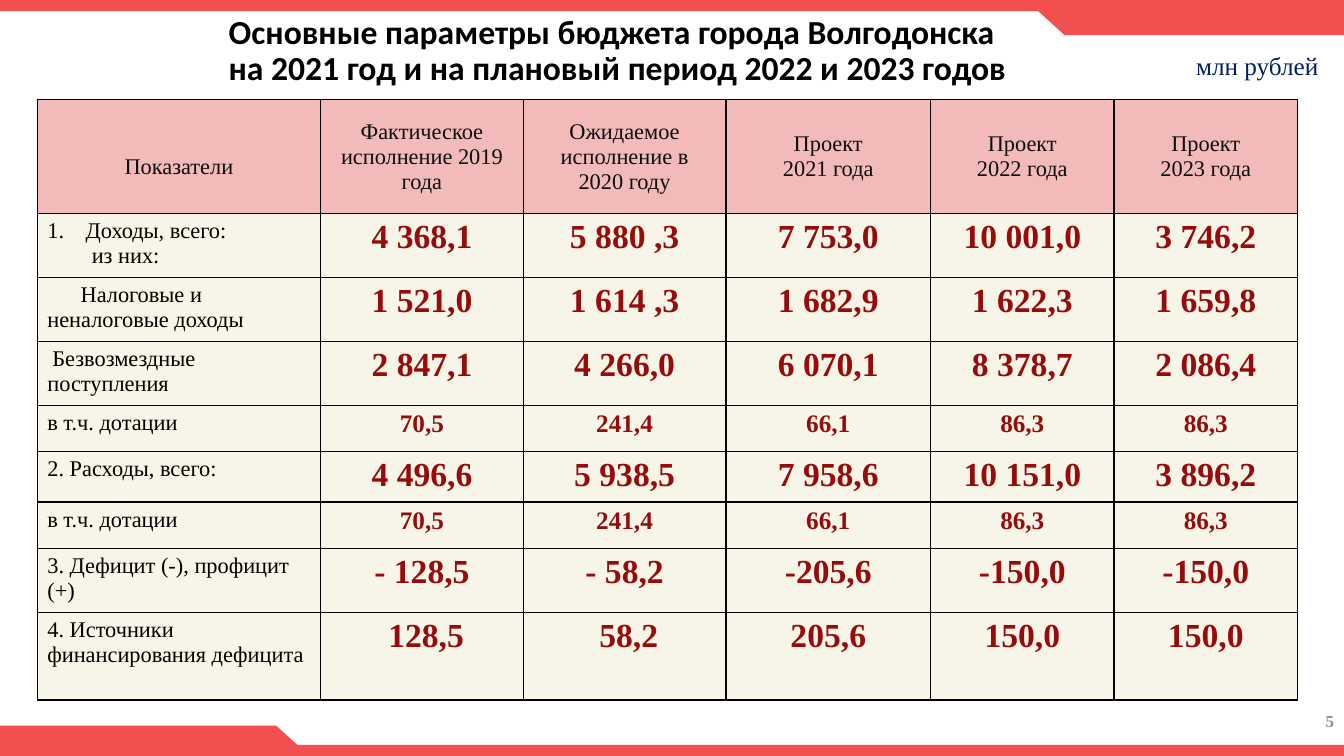
from lxml.etree import SubElement
from pptx import Presentation
from pptx.dml.color import RGBColor
from pptx.enum.shapes import MSO_SHAPE as SHAPE
from pptx.enum.text import MSO_ANCHOR as ANCHOR, PP_ALIGN as ALIGN
from pptx.oxml.ns import qn
from pptx.util import Inches, Pt

RED, HEAD_FILL, BODY_FILL = "F25050", "F3BABA", "F7F5E7"
SERIF = "Times New Roman"
LABEL = dict(name=SERIF, size=Pt(16), color="000000")
HEAD = dict(LABEL, color="0D0D0D")
VALUE = dict(name=SERIF, size=Pt(24), color="960B0B", bold=True)
SUBVALUE = dict(VALUE, size=Pt(18))

COLS = [2.81, 2.01, 2.01, 2.03, 1.82, 1.82]
ROWS = [1.13, 0.61, 0.61, 0.61, 0.46, 0.48, 0.46, 0.61, 0.87]
HEADERS = ["Показатели", "Фактическое исполнение 2019 года",
           "Ожидаемое исполнение в\n2020 году",
           "Проект\n2021 года", "Проект\n2022 года", "Проект\n2023 года"]
GRANTS = ["в т.ч. дотации", "70,5", "241,4", "66,1", "86,3", "86,3"]
BUDGET = [
    ["Доходы, всего:\nиз них:", "4 368,1", "5 880 ,3", "7 753,0", "10 001,0", "3 746,2"],
    ["Налоговые и неналоговые доходы", "1 521,0", "1 614 ,3", "1 682,9", "1 622,3", "1 659,8"],
    ["Безвозмездные поступления", "2 847,1", "4 266,0", "6 070,1", "8 378,7", "2 086,4"],
    GRANTS,
    ["2. Расходы, всего:", "4 496,6", "5 938,5", "7 958,6", "10 151,0", "3 896,2"],
    GRANTS,
    ["3. Дефицит (-), профицит (+)", "- 128,5", "- 58,2", "-205,6", "-150,0", "-150,0"],
    ["4. Источники финансирования дефицита", " 128,5", " 58,2", "205,6", "150,0", "150,0"],
]


def rgb(color):
    return RGBColor.from_string(color)


def set_indent(p, left, first):
    pPr = p._p.get_or_add_pPr()
    pPr.set("marL", str(Inches(left)))
    pPr.set("indent", str(Inches(first)))
    return pPr


class Deck:
    def __init__(self, width, height):
        self.prs = Presentation()
        self.prs.slide_width, self.prs.slide_height = Inches(width), Inches(height)
        self.s = self.prs.slides.add_slide(self.prs.slide_layouts[6])

    def shape(self, kind, box, rotation=0):
        sp = self.s.shapes.add_shape(kind, *map(Inches, box))
        sp.shadow.inherit = False
        sp.fill.solid()
        sp.fill.fore_color.rgb = rgb(RED)
        sp.line.fill.background()
        sp.rotation = rotation

    def fill_text(self, tf, text, style, align=ALIGN.LEFT, spacing=None):
        """Fill a text frame: a newline starts a paragraph, a vertical tab breaks a line."""
        tf.text = text
        for p in tf.paragraphs:
            p.alignment = align
            if spacing:
                p.line_spacing = spacing
            for r in p.runs:
                for key, value in style.items():
                    if key == "color":
                        r.font.color.rgb = rgb(value)
                    else:
                        setattr(r.font, key, value)

    def text(self, box, text, style, align=ALIGN.LEFT, anchor=ANCHOR.TOP, spacing=None):
        tf = self.s.shapes.add_textbox(*map(Inches, box)).text_frame
        tf.word_wrap = True
        tf.vertical_anchor = anchor
        self.fill_text(tf, text, style, align, spacing)

    def cell(self, cell, text, style, fill, align, anchor):
        tcPr = cell._tc.get_or_add_tcPr()
        for side in ("a:lnL", "a:lnR", "a:lnT", "a:lnB"):
            ln = SubElement(tcPr, qn(side), w=str(Pt(1)))
            SubElement(SubElement(ln, qn("a:solidFill")), qn("a:srgbClr"), val="000000")
        cell.fill.solid()
        cell.fill.fore_color.rgb = rgb(fill)
        cell.vertical_anchor = anchor
        self.fill_text(cell.text_frame, text, style, align)

    def table(self, left, top):
        tbl = self.s.shapes.add_table(len(ROWS), len(COLS), Inches(left), Inches(top),
                                      Inches(sum(COLS)), Inches(sum(ROWS))).table
        tbl.first_row = tbl.horz_banding = False
        for col, width in zip(tbl.columns, COLS):
            col.width = Inches(width)
        for row, height in zip(tbl.rows, ROWS):
            row.height = Inches(height)
        for j, text in enumerate(HEADERS):
            anchor = ANCHOR.MIDDLE if j else ANCHOR.TOP
            self.cell(tbl.cell(0, j), text, HEAD, HEAD_FILL, ALIGN.CENTER, anchor)
        tbl.cell(0, 0).margin_top = Inches(0.54)
        for i, row in enumerate(BUDGET, 1):
            value_style = SUBVALUE if row is GRANTS else VALUE
            for j, text in enumerate(row):
                style, align = (value_style, ALIGN.CENTER) if j else (LABEL, ALIGN.LEFT)
                self.cell(tbl.cell(i, j), text, style, BODY_FILL, align, ANCHOR.TOP)
        return tbl


def main():
    deck = Deck(13.33, 7.5)
    for top in (0, 7.39):
        deck.shape(SHAPE.RECTANGLE, (0, top, 13.33, 0.11))
    for bar_left, bar_top, tip_left, tip_top, turn in ((10.55, 0.05, 10.22, 0.04, 0),
                                                       (-0.04, 7.2, 2.41, 7.2, 180)):
        deck.shape(SHAPE.RECTANGLE, (bar_left, bar_top, 2.78, 0.3))
        deck.shape(SHAPE.FLOWCHART_MERGE, (tip_left, tip_top, 0.66, 0.3), turn)

    deck.text((2.17, 0, 9, 1.02),
              "Основные параметры бюджета города Волгодонска\v"
              "на 2021 год и на плановый период 2022 и 2023 годов",
              dict(name="Calibri", size=Pt(24), color="000000", bold=True),
              anchor=ANCHOR.MIDDLE, spacing=0.9)

    tbl = deck.table(0.37, 0.99)
    income, of_which = tbl.cell(1, 0).text_frame.paragraphs
    pPr = set_indent(income, 0.38, -0.38)
    SubElement(pPr, qn("a:buFont"), typeface="+mj-lt")
    SubElement(pPr, qn("a:buAutoNum"), type="arabicPeriod")
    set_indent(of_which, 0.44, 0)
    for row, first in ((2, 0.33), (3, 0.05)):
        set_indent(tbl.cell(row, 0).text_frame.paragraphs[0], 0, first)

    deck.text((12.86, 6.95, 0.47, 0.4), "5",
              dict(name=SERIF, size=Pt(12), color="8C8C8C", bold=True),
              ALIGN.RIGHT, ANCHOR.MIDDLE)
    deck.text((11.61, 0.45, 1.72, 1.01), "млн рублей",
              dict(name=SERIF, size=Pt(18), color="002060"), ALIGN.CENTER)
    deck.prs.save("out.pptx")


if __name__ == "__main__":
    main()
